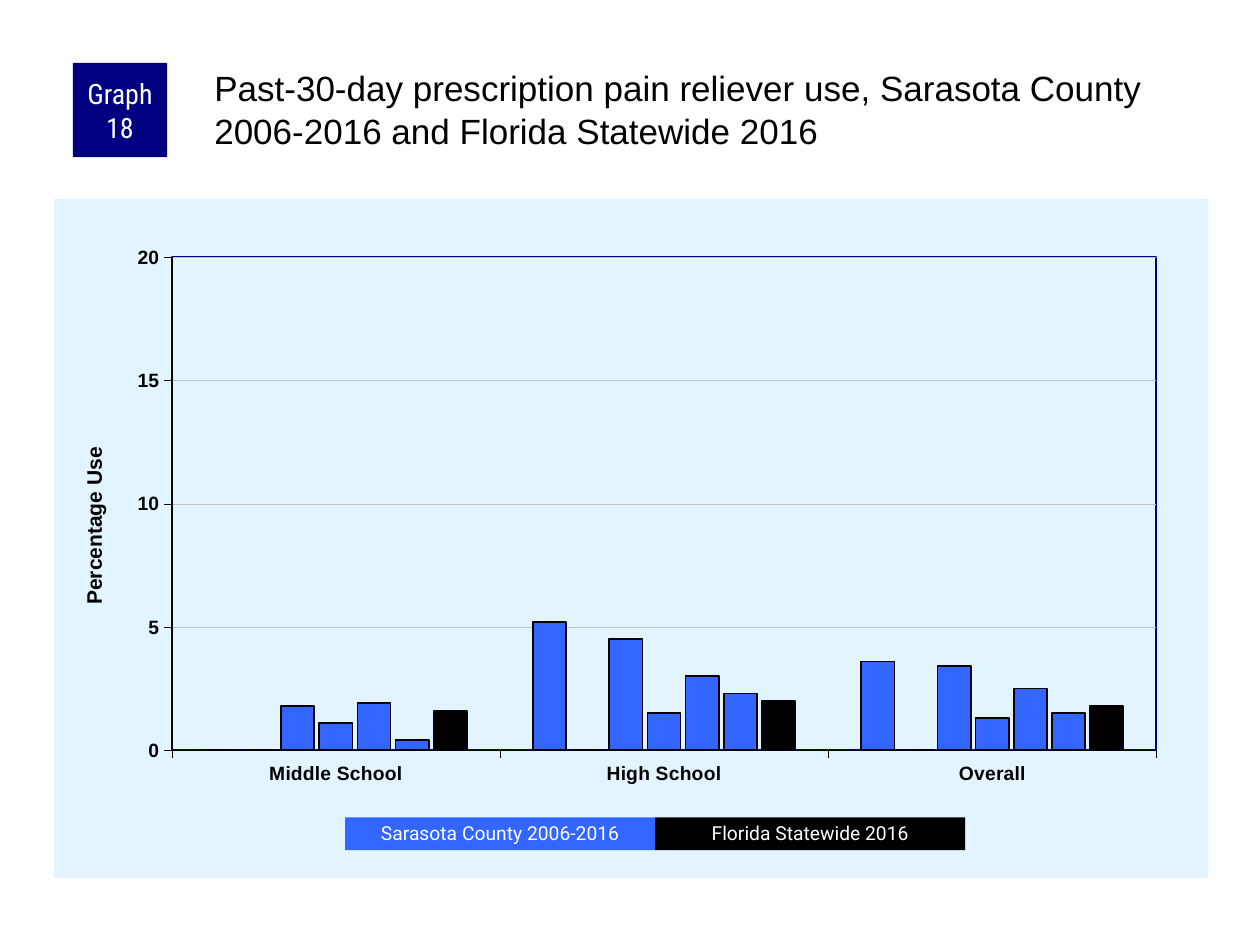
from lxml import etree
from pptx import Presentation
from pptx.chart.data import CategoryChartData
from pptx.dml.color import RGBColor
from pptx.enum.chart import XL_CHART_TYPE, XL_TICK_MARK
from pptx.enum.shapes import MSO_SHAPE
from pptx.enum.text import MSO_ANCHOR, MSO_AUTO_SIZE, PP_ALIGN
from pptx.oxml import parse_xml
from pptx.oxml.ns import qn
from pptx.util import Cm, Pt

COLUMNS = XL_CHART_TYPE.COLUMN_CLUSTERED
TICK_OUT = XL_TICK_MARK.OUTSIDE
RECTANGLE = MSO_SHAPE.RECTANGLE
TOP, MIDDLE = MSO_ANCHOR.TOP, MSO_ANCHOR.MIDDLE
LEFT, CENTER = PP_ALIGN.LEFT, PP_ALIGN.CENTER
NO_FIT = MSO_AUTO_SIZE.NONE

COLORS = {
    "navy": "000080",
    "blue": "3366FF",
    "black": "000000",
    "white": "FFFFFF",
    "panel": "E1F4FF",
    "grid": "C0C0C0",
}
NAMESPACES = (
    'xmlns:c="http://schemas.openxmlformats.org/drawingml/2006/chart" '
    'xmlns:a="http://schemas.openxmlformats.org/drawingml/2006/main"'
)
CATEGORIES = ["Middle School", "High School", "Overall"]
COUNTY_VALUES = [
    (0, 5.2, 3.6),
    (0, 0, 0),
    (1.8, 4.5, 3.4),
    (1.1, 1.5, 1.3),
    (1.9, 3, 2.5),
    (0.4, 2.3, 1.5),
]
STATE_VALUES = (1.6, 2, 1.8)


def color(name):
    """Return the named colour."""
    return RGBColor.from_string(COLORS[name])


def style_font(font, name, size, color_name, bold=False):
    """Apply typeface, size, colour and weight."""
    for key, value in {"name": name, "size": Pt(size), "bold": bold}.items():
        setattr(font, key, value)
    font.color.rgb = color(color_name)


def style_line(line, color_name, width):
    """Apply colour and width to a line."""
    line.color.rgb = color(color_name)
    line.width = Pt(width)


def place(shape, left, top, width, height):
    """Move and size a shape in centimetres."""
    bounds = {"left": left, "top": top, "width": width, "height": height}
    for key, value in bounds.items():
        setattr(shape, key, Cm(value))


def write(shape, text, font, size, color_name, align, anchor, margins, spacing=None):
    """Put one formatted paragraph into a shape."""
    frame = shape.text_frame
    sides = ("margin_left", "margin_top", "margin_right", "margin_bottom")
    settings = dict(zip(sides, map(Cm, margins)))
    settings.update(word_wrap=True, auto_size=NO_FIT, vertical_anchor=anchor)
    for key, value in settings.items():
        setattr(frame, key, value)
    para = frame.paragraphs[0]
    para.alignment = align
    para.line_spacing = spacing
    span = para.add_run()
    span.text = text
    style_font(span.font, font, size, color_name)


def add_label(page, bounds, fill, text, font, size, margins, spacing=None):
    """Add a filled rectangle with centred white text."""
    box = page.shapes.add_shape(RECTANGLE, *map(Cm, bounds))
    box.shadow.inherit = False
    box.fill.solid()
    box.fill.fore_color.rgb = color(fill)
    box.line.fill.background()
    write(box, text, font, size, "white", CENTER, MIDDLE, margins, spacing)


def make_layout(target="", **fractions):
    """Build a manual layout for a chart part."""
    layout = parse_xml(f"<c:layout {NAMESPACES}><c:manualLayout/></c:layout>")
    values = {"layoutTarget": target} if target else {}
    values.update(xMode="edge", yMode="edge", **fractions)
    for key, value in values.items():
        etree.SubElement(layout[0], qn(f"c:{key}")).set("val", str(value))
    return layout


def make_fill(color_name):
    """Build a solid fill with no outline for the chart area."""
    return parse_xml(
        f'<c:spPr {NAMESPACES}><a:solidFill><a:srgbClr val="{COLORS[color_name]}"/>'
        "</a:solidFill><a:ln><a:noFill/></a:ln></c:spPr>"
    )


def make_border(color_name, width):
    """Build an outline with no fill for the plot area."""
    return parse_xml(
        f'<c:spPr {NAMESPACES}><a:noFill/><a:ln w="{Pt(width)}"><a:solidFill>'
        f'<a:srgbClr val="{COLORS[color_name]}"/></a:solidFill></a:ln></c:spPr>'
    )


def set_layout(part, index, layout):
    """Replace the layout of a chart part."""
    for old in part.findall(qn("c:layout")):
        part.remove(old)
    part.insert(index, layout)


def style_axes(chart):
    """Format both axes, the gridlines and the value title."""
    for axis in (chart.category_axis, chart.value_axis):
        axis.major_tick_mark = TICK_OUT
        style_font(axis.tick_labels.font, "Arial", 11, "black", True)
        style_line(axis.format.line, "black", 0.25)
    axis = chart.value_axis
    scale = {"minimum_scale": 0, "maximum_scale": 20, "major_unit": 5}
    for key, value in scale.items():
        setattr(axis, key, value)
    style_line(axis.major_gridlines.format.line, "grid", 0.25)
    para = axis.axis_title.text_frame.paragraphs[0]
    span = para.add_run()
    span.text = "Percentage Use"
    style_font(span.font, "Arial", 12, "black", True)
    set_layout(axis.axis_title.element, 1, make_layout(x=0.02, y=0.36))


def add_usage_chart(page):
    """Add the column chart of pain reliever use."""
    data = CategoryChartData()
    data.categories = CATEGORIES
    for number, values in enumerate(COUNTY_VALUES + [STATE_VALUES], 1):
        data.add_series(f"Series {number}", values)
    bounds = map(Cm, (1.09, 4.01, 23.27, 13.69))
    chart = page.shapes.add_chart(COLUMNS, *bounds, data).chart
    chart.has_legend = False
    chart.has_title = False
    style_font(chart.font, "Arial", 8, "black")
    plot = chart.plots[0]
    for key, value in {"gap_width": 200, "overlap": -15, "vary_by_categories": False}.items():
        setattr(plot, key, value)
    for number, series in enumerate(plot.series):
        series.format.fill.solid()
        fill = "blue" if number < len(COUNTY_VALUES) else "black"
        series.format.fill.fore_color.rgb = color(fill)
        style_line(series.format.line, "black", 1)
    style_axes(chart)
    body = chart.element.find(qn("c:chart"))
    body.addnext(make_fill("panel"))
    area = body.find(qn("c:plotArea"))
    set_layout(area, 0, make_layout("inner", x=0.102, y=0.086, w=0.853, h=0.726))
    area.append(make_border("navy", 1))


def main():
    """Build and save the slide."""
    deck = Presentation()
    deck.slide_width, deck.slide_height = Cm(25.4), Cm(19.05)
    page = deck.slides.add_slide(deck.slide_layouts[5])
    title = page.shapes.title
    place(title, 4.24, 1.27, 20.12, 2.11)
    heading = (
        "Past-30-day prescription pain reliever use, Sarasota County "
        "2006-2016 and Florida Statewide 2016"
    )
    write(title, heading, "Arial", 20, "black", LEFT, TOP, (0.08, 0.08, 0, 0))
    add_usage_chart(page)
    add_label(page, (1.47, 1.27, 1.9, 1.9), "navy", "Graph 18",
              "Roboto Condensed", 16, (0.13, 0, 0.13, 0))
    keys = [("blue", "Sarasota County 2006-2016"), ("black", "Florida Statewide 2016")]
    for index, (fill, text) in enumerate(keys):
        bounds = (6.96 + 6.25 * index, 16.48, 6.25, 0.66)
        add_label(page, bounds, fill, text, "Roboto", 11, (0.25, 0.13, 0.25, 0.13), 0.9)
    deck.save("out.pptx")


if __name__ == "__main__":
    main()
